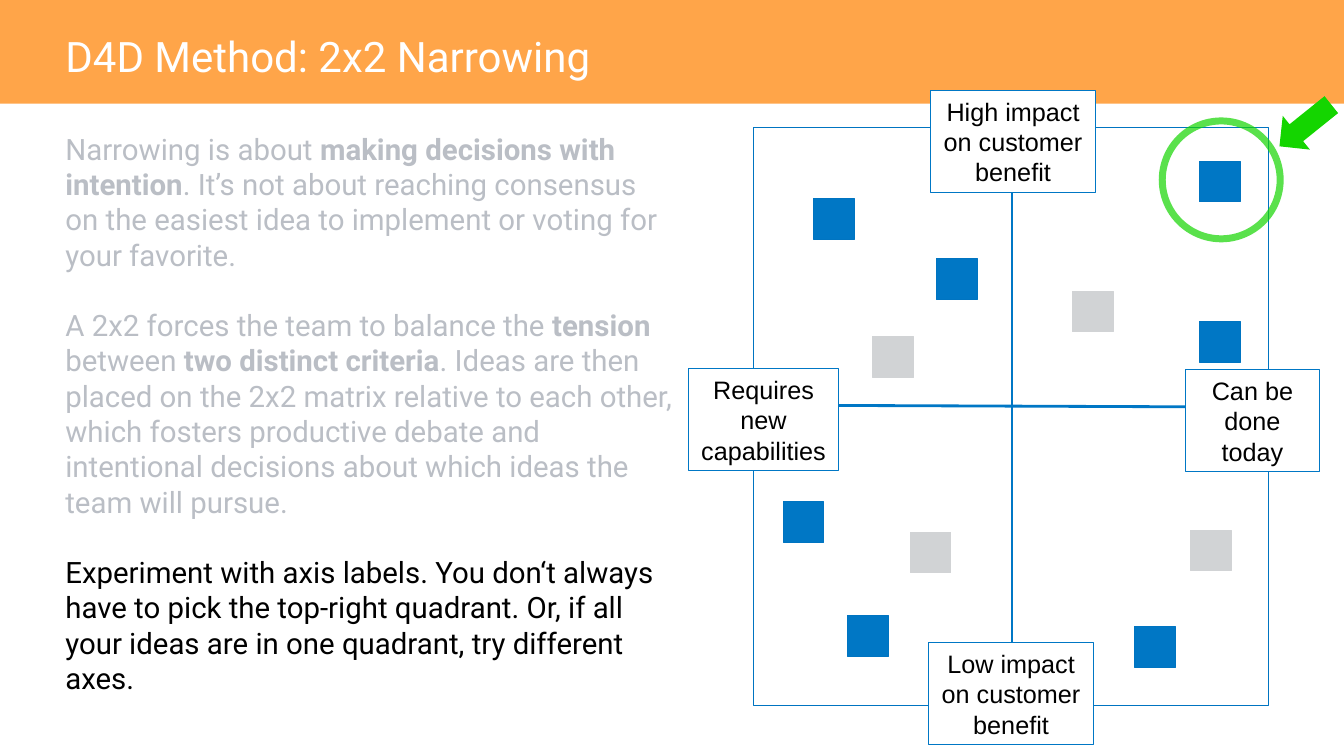
from dataclasses import dataclass

from lxml.etree import SubElement
from pptx import Presentation
from pptx.dml.color import RGBColor
from pptx.enum.shapes import MSO_CONNECTOR, MSO_SHAPE
from pptx.enum.text import MSO_ANCHOR, PP_ALIGN
from pptx.oxml.ns import qn
from pptx.shapes.autoshape import Shape
from pptx.slide import Slide
from pptx.util import Inches, Length, Pt

ORANGE = RGBColor(0xFF, 0xA5, 0x49)
WHITE = RGBColor(0xFF, 0xFF, 0xFF)
BLACK = RGBColor(0x00, 0x00, 0x00)
MUTED = RGBColor(0xBA, 0xBE, 0xC5)
BLUE = RGBColor(0x00, 0x77, 0xC5)
DARK_BLUE = RGBColor(0x00, 0x74, 0xC1)
GREY = RGBColor(0xD1, 0xD3, 0xD5)
GREEN = RGBColor(0x14, 0xD5, 0x00)

COLUMNS = 160
SLIDE_WIDTH = Inches(13.33)
SLIDE_HEIGHT = Inches(7.5)
IDEA_SIZE = 4.84
LABEL_HEIGHT = 12.12


def grid(units: float) -> Length:
    return Length(round(SLIDE_WIDTH * units / COLUMNS))


@dataclass(frozen=True)
class Area:
    column: float
    row: float
    columns: float
    rows: float

    def lengths(self) -> tuple[Length, ...]:
        return tuple(map(grid, (self.column, self.row, self.columns, self.rows)))


@dataclass(frozen=True)
class Idea:
    column: float
    row: float
    fill: RGBColor = BLUE
    line: RGBColor = DARK_BLUE


@dataclass(frozen=True)
class Label:
    text: str
    column: float
    row: float
    columns: float


@dataclass(frozen=True)
class Axis:
    start: tuple[float, float]
    end: tuple[float, float]


@dataclass(frozen=True)
class Span:
    text: str
    bold: bool = False


@dataclass(frozen=True)
class Passage:
    color: RGBColor
    spans: tuple[Span, ...]


MATRIX = Area(89.76, 15.24, 61.32, 68.76)
RIGHT = MATRIX.column + MATRIX.columns
BOTTOM = MATRIX.row + MATRIX.rows
HORIZONTAL = Axis((MATRIX.column, 48.24), (RIGHT, 48.48))
VERTICAL = Axis((120.48, MATRIX.row), (120.48, BOTTOM))

IDEAS = (
    Idea(96.84, 23.64),
    Idea(142.8, 19.2),
    Idea(93.24, 59.76),
    Idea(100.92, 73.32),
    Idea(142.8, 38.28),
    Idea(135.12, 74.64),
    Idea(111.48, 30.84),
    Idea(127.68, 34.68, GREY, GREY),
    Idea(108.36, 63.36, GREY, GREY),
    Idea(141.72, 63.12, GREY, GREY),
    Idea(103.92, 40.08, GREY, GREY),
)
LABELS = (
    Label("Can be done today", 141.12, 44.04, 15.96),
    Label("Requires new capabilities", 81.96, 43.92, 17.88),
    Label("High impact on customer benefit", 110.76, 10.8, 19.68),
    Label("Low impact on customer benefit", 110.52, 76.56, 19.68),
)
PASSAGES = (
    Passage(MUTED, (
        Span("Narrowing is about "),
        Span("making decisions with intention", True),
        Span(". It’s not about reaching consensus on the easiest idea to "
             "implement or voting for your favorite."),
    )),
    Passage(MUTED, (
        Span("A 2x2 forces the team to balance the "),
        Span("tension ", True),
        Span("between "),
        Span("two distinct criteria", True),
        Span(". Ideas are then placed on the 2x2 matrix relative to each other, "
             "which fosters productive debate and intentional decisions about "
             "which ideas the team will pursue."),
    )),
    Passage(BLACK, (
        Span("Experiment with axis labels. You don‘t always have to pick the "
             "top-right quadrant. Or, if all your ideas are in one quadrant, "
             "try different axes."),
    )),
)


def draw_shape(page: Slide, kind: MSO_SHAPE, area: Area, fill: RGBColor | None = None,
               line: RGBColor | None = None, weight: float = 0.75) -> Shape:
    shape = page.shapes.add_shape(kind, *area.lengths())
    shape.shadow.inherit = False
    if fill is None:
        shape.fill.background()
    else:
        shape.fill.solid()
        shape.fill.fore_color.rgb = fill
    if line is None:
        shape.line.fill.background()
    else:
        shape.line.color.rgb = line
        shape.line.width = Pt(weight)
    return shape


def draw_axis(page: Slide, axis: Axis) -> None:
    ends = map(grid, (*axis.start, *axis.end))
    connector = page.shapes.add_connector(MSO_CONNECTOR.STRAIGHT, *ends)
    connector.line.color.rgb = BLUE
    connector.line.width = Pt(2)
    SubElement(connector._element.spPr, qn("a:effectLst"))


def draw_idea(page: Slide, idea: Idea) -> None:
    area = Area(idea.column, idea.row, IDEA_SIZE, IDEA_SIZE)
    draw_shape(page, MSO_SHAPE.RECTANGLE, area, idea.fill, idea.line)


def draw_label(page: Slide, label: Label) -> None:
    area = Area(label.column, label.row, label.columns, LABEL_HEIGHT)
    box = draw_shape(page, MSO_SHAPE.RECTANGLE, area, WHITE, BLUE)
    box.text_frame.word_wrap = True
    box.text_frame.vertical_anchor = MSO_ANCHOR.MIDDLE
    para = box.text_frame.paragraphs[0]
    para.text = label.text
    para.alignment = PP_ALIGN.CENTER
    para.font.name = "Arial"
    para.font.size = Pt(18)
    para.font.color.rgb = BLACK


def draw_title(page: Slide, text: str) -> None:
    box = page.shapes.add_textbox(*Area(6.6, 3.36, 145.8, 7.2).lengths())
    box.text_frame.word_wrap = True
    box.text_frame.vertical_anchor = MSO_ANCHOR.MIDDLE
    para = box.text_frame.paragraphs[0]
    para.text = text
    para.line_spacing = 0.95
    para.font.name = "Roboto"
    para.font.size = Pt(30)
    para.font.color.rgb = WHITE


def draw_passages(page: Slide, passages: tuple[Passage, ...]) -> None:
    box = page.shapes.add_textbox(*Area(6.6, 15, 74.88, 72.36).lengths())
    frame = box.text_frame
    frame.word_wrap = True
    for index, passage in enumerate(passages):
        para = frame.add_paragraph() if index else frame.paragraphs[0]
        if index:
            para.space_before = Pt(25.2)
        para.font.name = "Roboto"
        para.font.size = Pt(21)
        para.font.color.rgb = passage.color
        for span in passage.spans:
            run = para.add_run()
            run.text = span.text
            if span.bold:
                run.font.bold = True


def draw_highlight(page: Slide) -> None:
    circle = draw_shape(page, MSO_SHAPE.OVAL, Area(138.36, 14.4, 14.04, 14.04),
                        line=GREEN, weight=5)
    color = circle.line._ln.find(".//" + qn("a:srgbClr"))
    SubElement(color, qn("a:alpha"), val="70000")
    arrow = draw_shape(page, MSO_SHAPE.RIGHT_ARROW, Area(151.44, 12.36, 7.92, 5.16), GREEN)
    arrow.rotation = 141.2


def main() -> None:
    deck = Presentation()
    deck.slide_width = SLIDE_WIDTH
    deck.slide_height = SLIDE_HEIGHT
    page = deck.slides.add_slide(deck.slide_layouts[6])
    draw_shape(page, MSO_SHAPE.RECTANGLE, Area(0, 0, COLUMNS, 12.36), ORANGE)
    draw_title(page, "D4D Method: 2x2 Narrowing")
    draw_shape(page, MSO_SHAPE.RECTANGLE, MATRIX, line=DARK_BLUE)
    for axis in (HORIZONTAL, VERTICAL):
        draw_axis(page, axis)
    for idea in IDEAS:
        draw_idea(page, idea)
    for label in LABELS:
        draw_label(page, label)
    draw_highlight(page)
    draw_passages(page, PASSAGES)
    deck.save("out.pptx")


if __name__ == "__main__":
    main()
